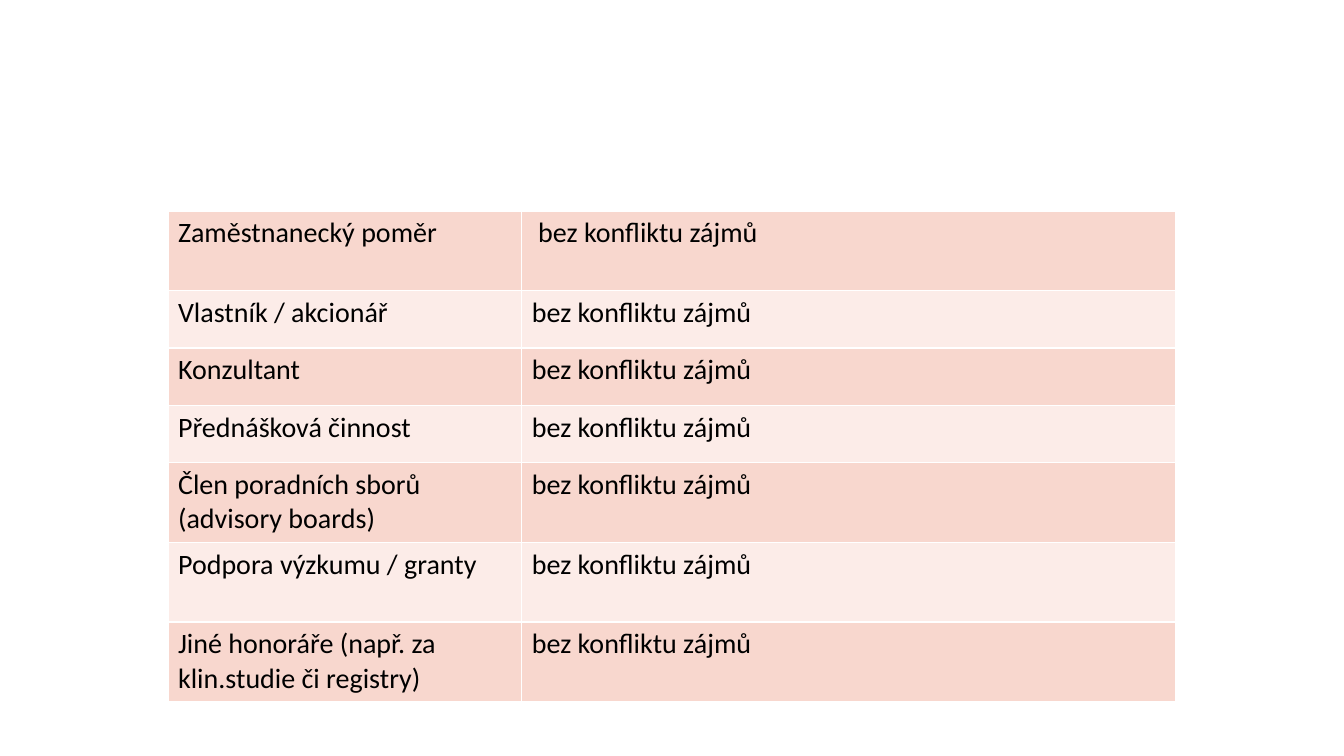
from dataclasses import dataclass

from lxml import etree
from pptx import Presentation
from pptx import util as u
from pptx.dml.color import RGBColor
from pptx.oxml import ns
from pptx.table import Table, _Cell

PAGE_WIDTH, PAGE_HEIGHT = u.Inches(13.33), u.Inches(7.5)
TABLE_LEFT, TABLE_TOP, TABLE_WIDTH = 0.125, 0.279, 0.75  # shares of the page
COLUMN_SHARES = (0.351, 0.649)  # shares of the table width
SINGLE, DOUBLE = 0.57, 0.79  # row heights in inches
BANDS = ("F8D7CE", "FCECE8")
NO_CONFLICT = "bez konfliktu zájmů"


@dataclass(frozen=True)
class Disclosure:
    relation: str
    height: float
    statement: str = NO_CONFLICT


DISCLOSURES = (
    Disclosure("Zaměstnanecký poměr", DOUBLE, " " + NO_CONFLICT),
    Disclosure("Vlastník / akcionář", SINGLE),
    Disclosure("Konzultant", SINGLE),
    Disclosure("Přednášková činnost", SINGLE),
    Disclosure("Člen poradních sborů (advisory boards)", DOUBLE),
    Disclosure("Podpora výzkumu / granty", DOUBLE),
    Disclosure("Jiné honoráře (např. za klin.studie či registry)", DOUBLE),
)


def color(value: str) -> RGBColor:
    return RGBColor.from_string(value)


def write(cell: _Cell, content: str, *, size: float = 20,
          font: str = "Calibri", ink: str = "000000") -> None:
    para = cell.text_frame.paragraphs[0]
    span = para.add_run()
    span.text = content
    span.font.size = u.Pt(size)
    span.font.name = font
    span.font.color.rgb = color(ink)


def add_borders(cell: _Cell, line_color: str = "FFFFFF", width: float = 1) -> None:
    """Line all four sides; call before the fill, which must follow the lines."""
    properties = cell._tc.get_or_add_tcPr()
    for side in ("a:lnL", "a:lnR", "a:lnT", "a:lnB"):
        line = etree.SubElement(properties, ns.qn(side), w=str(u.Pt(width)))
        fill = etree.SubElement(line, ns.qn("a:solidFill"))
        etree.SubElement(fill, ns.qn("a:srgbClr"), val=line_color)


def fill_row(table: Table, index: int, disclosure: Disclosure) -> None:
    table.rows[index].height = u.Inches(disclosure.height)
    for column, content in enumerate((disclosure.relation, disclosure.statement)):
        cell = table.cell(index, column)
        add_borders(cell)
        cell.fill.solid()
        cell.fill.fore_color.rgb = color(BANDS[index % len(BANDS)])
        write(cell, content)


def main() -> None:
    deck = Presentation()
    deck.slide_width, deck.slide_height = PAGE_WIDTH, PAGE_HEIGHT
    page = deck.slides.add_slide(deck.slide_layouts[6])

    width = int(PAGE_WIDTH * TABLE_WIDTH)
    height = u.Inches(sum(item.height for item in DISCLOSURES))
    table = page.shapes.add_table(
        len(DISCLOSURES), len(COLUMN_SHARES),
        int(PAGE_WIDTH * TABLE_LEFT), int(PAGE_HEIGHT * TABLE_TOP),
        width, height).table
    table.first_row = False
    table.horz_banding = False
    for column, share in zip(table.columns, COLUMN_SHARES):
        column.width = int(width * share)
    for index, disclosure in enumerate(DISCLOSURES):
        fill_row(table, index, disclosure)

    deck.save("out.pptx")


if __name__ == "__main__":
    main()
